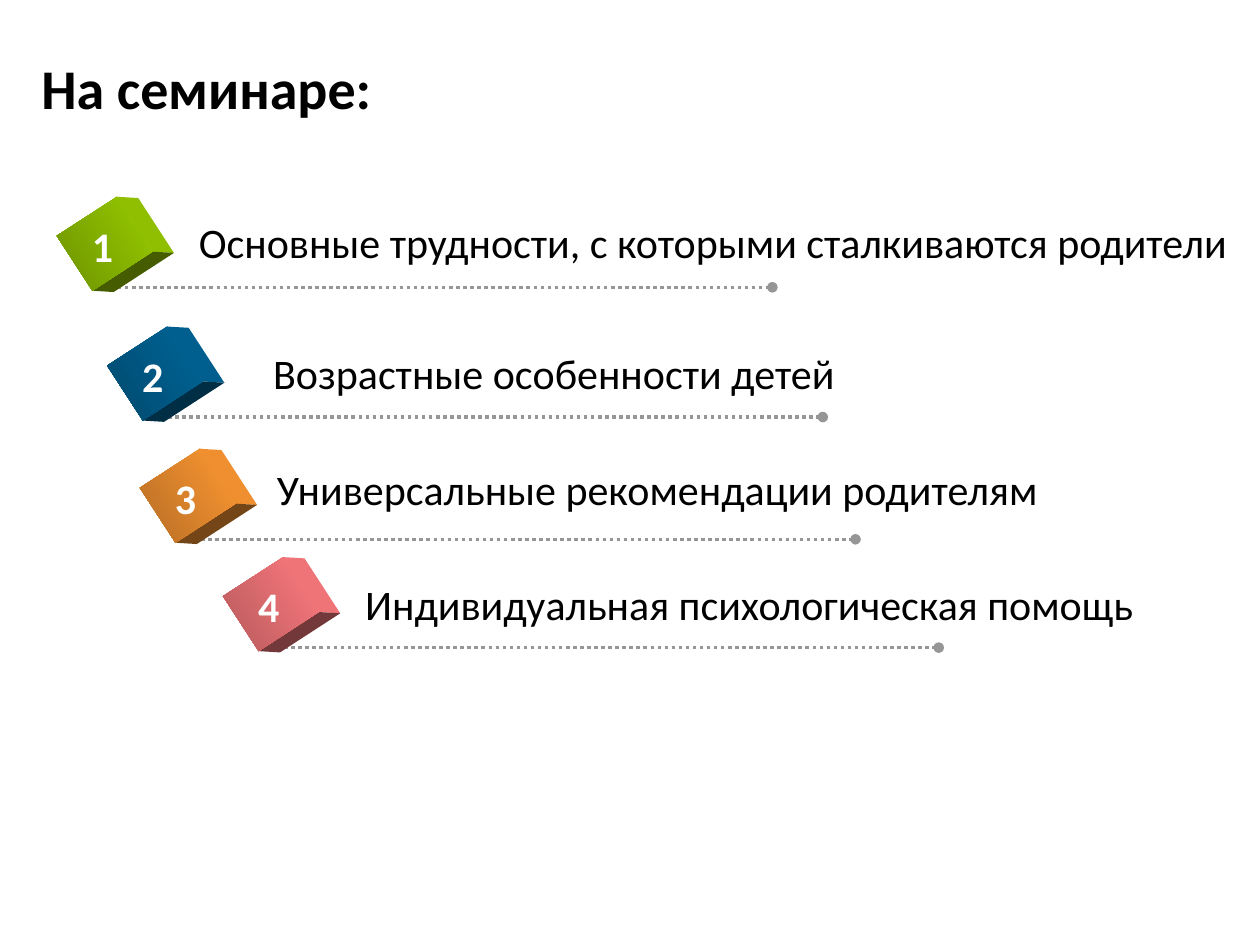
from math import cos, radians, sin

from lxml.etree import SubElement
from pptx import Presentation
from pptx.dml.color import RGBColor
from pptx.enum.dml import MSO_LINE_DASH_STYLE as Dash
from pptx.enum.shapes import MSO_CONNECTOR as Connector, MSO_SHAPE as Shape
from pptx.enum.text import MSO_ANCHOR as Anchor
from pptx.oxml.ns import qn
from pptx.util import Inches, Pt

CELL = Inches(0.1)
COLUMNS, ROWS = 100, 75
FACE_WIDTH, FACE_HEIGHT, TILT = 5.2, 5.7, 57
DEPTH = (1.7, 0.1)
TOPICS = [
    ("Основные трудности, с которыми сталкиваются родители",
     (5.7, 16.5), (14.8, 16.7, 84.4), ("99CC00", "6D9200", "8FBF00", "455C00")),
    ("Возрастные особенности детей",
     (9.7, 26.8), (20.7, 27.1, 47), ("006699", "00496D", "005F8F", "002E45")),
    ("Универсальные рекомендации родителям",
     (12.3, 36.5), (21, 36.3, 63), ("FF9933", "B66D24", "EF8F30", "734517")),
    ("Индивидуальная психологическая помощь",
     (18.9, 45.1), (28, 45.4, 63.6), ("FF7C80", "B6595C", "EF7478", "73383A")),
]


def grid(cells):
    """Turn a count of grid cells into a length."""
    return round(cells * CELL)


def color(hex_value):
    """Turn a hex string into a colour."""
    return RGBColor.from_string(hex_value)


def add_text(shapes, text, box, size=24, ink="000000", bold=False, wrap=False):
    """Place one line of text in a box of grid cells."""
    textbox = shapes.add_textbox(*map(grid, box))
    frame = textbox.text_frame
    frame.word_wrap = wrap
    paragraph = frame.paragraphs[0]
    paragraph.text = text
    font = paragraph.font
    font.name, font.size, font.bold = "Calibri", Pt(size), bold
    font.color.rgb = color(ink)
    return textbox


def add_title(shapes, text, box):
    """Place the slide title, centred vertically in its box."""
    frame = add_text(shapes, text, box, size=32, bold=True, wrap=True).text_frame
    frame.vertical_anchor = Anchor.MIDDLE
    frame.paragraphs[0].line_spacing = 0.9


def add_underline(shapes, left, top, length):
    """Draw a dotted rule that ends in a dot."""
    rule = shapes.add_connector(
        Connector.STRAIGHT, *map(grid, (left, top, left + length, top)))
    rule.line.color.rgb = color("969696")
    rule.line.width = Pt(2)
    rule.line.dash_style = Dash.ROUND_DOT
    SubElement(rule.line._get_or_add_ln(), qn("a:tailEnd"), type="oval")
    SubElement(rule._element.spPr, qn("a:effectLst"))


def add_side(shapes, start, end, shade):
    """Extrude one edge of the cube's front into a side face."""
    (x1, y1), (x2, y2), (dx, dy) = start, end, DEPTH
    builder = shapes.build_freeform(grid(x1), grid(y1))
    builder.add_line_segments(
        [(grid(x), grid(y)) for x, y in
         ((x2, y2), (x2 + dx, y2 + dy), (x1 + dx, y1 + dy))])
    side = builder.convert_to_shape()
    side.shadow.inherit = False
    side.fill.solid()
    side.fill.fore_color.rgb = color(shade)
    side.line.fill.background()


def add_cube(shapes, left, top, shades):
    """Build a tilted cube from its front and two side faces."""
    light, dark, upper, lower = shades
    half_width, half_height, angle = FACE_WIDTH / 2, FACE_HEIGHT / 2, radians(TILT)
    corners = [
        (left + half_width + x * cos(angle) - y * sin(angle),
         top + half_height + x * sin(angle) + y * cos(angle))
        for x, y in ((-half_width, -half_height), (half_width, -half_height),
                     (half_width, half_height))]
    for start, end, shade in zip(corners, corners[1:], (upper, lower)):
        add_side(shapes, start, end, shade)
    front = shapes.add_shape(
        Shape.RECTANGLE, *map(grid, (left, top, FACE_WIDTH, FACE_HEIGHT)))
    front.rotation = TILT
    front.shadow.inherit = False
    front.line.fill.background()
    front.fill.gradient()
    front.fill.gradient_angle = 270
    for stop, shade in zip(front.fill.gradient_stops, (light, dark)):
        stop.color.rgb = color(shade)


def add_topic(slide, number, text, origin, label, shades):
    """Group a numbered cube with its rule and label."""
    shapes = slide.shapes.add_group_shape().shapes
    left, top = origin
    label_left, label_top, label_width = label
    add_underline(shapes, left + 3.1, top + 6.3, 52.5)
    add_cube(shapes, left, top, shades)
    add_text(shapes, text, (label_left, label_top, label_width, 5.1))
    add_text(shapes, str(number), (left + 0.6, top + 0.5, 3.9, 5),
             ink="FFFFFF", bold=True)


def main():
    """Build and save the seminar slide."""
    deck = Presentation()
    deck.slide_width, deck.slide_height = grid(COLUMNS), grid(ROWS)
    slide = deck.slides.add_slide(deck.slide_layouts[6])
    add_title(slide.shapes, "На семинаре:", (2.3, 0, 90.9, 14.5))
    for number, topic in enumerate(TOPICS, start=1):
        add_topic(slide, number, *topic)
    deck.save("out.pptx")


if __name__ == "__main__":
    main()
